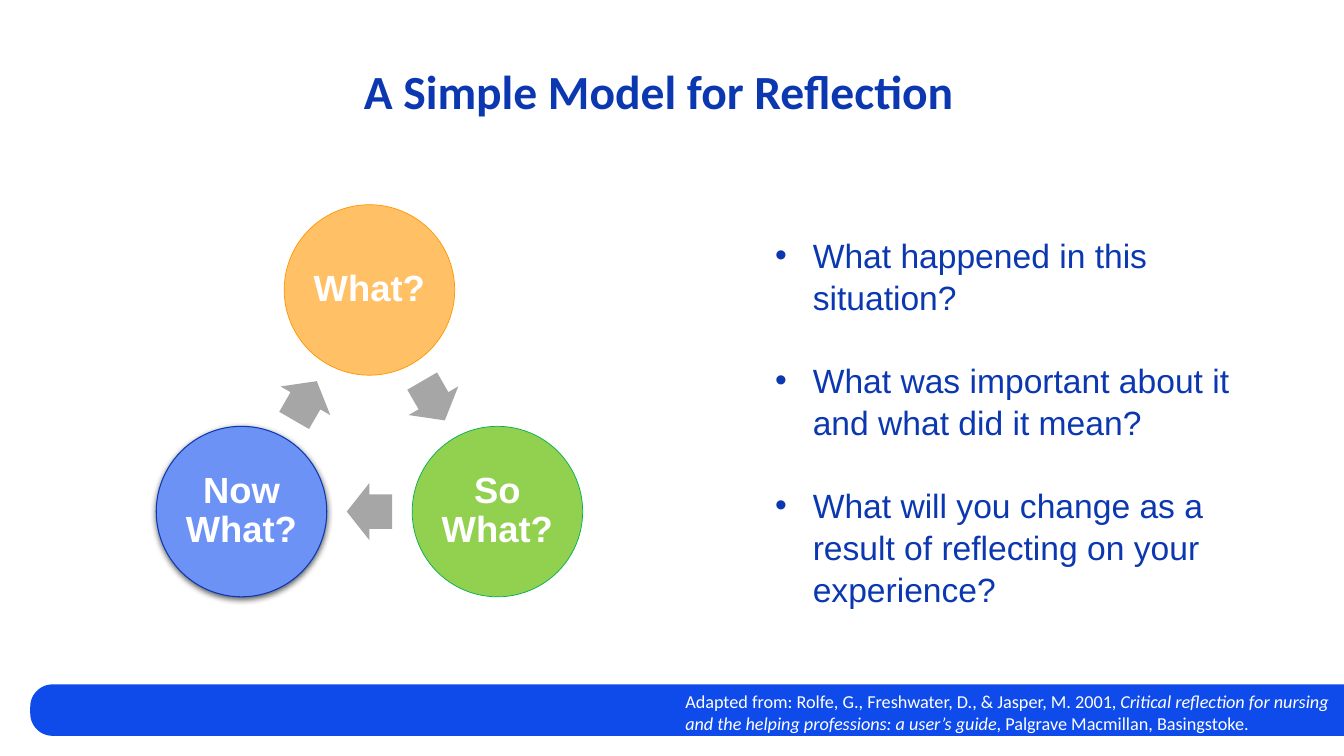
import math

import pptx
import pptx.dml.color
import pptx.enum.shapes
import pptx.enum.text
import pptx.oxml
import pptx.oxml.ns
import pptx.util

Pt = pptx.util.Pt
MSO_SHAPE = pptx.enum.shapes.MSO_SHAPE
PP_ALIGN = pptx.enum.text.PP_ALIGN
MSO_ANCHOR = pptx.enum.text.MSO_ANCHOR
MSO_AUTO_SIZE = pptx.enum.text.MSO_AUTO_SIZE

COLORS = {
    "navy": "0B38B0", "bar": "0F4BEB", "white": "FFFFFF", "arrow": "A6A6A6",
    "orange": "FFC066", "orange_line": "FF9600",
    "green": "92D050", "green_line": "00B050",
    "blue": "6C92F6", "shadow": "000000",
}
# label, fill, outline, outline width, has shadow; clockwise from the top
STAGES = [
    ("What?", "orange", "orange_line", 0.5, False),
    ("So What?", "green", "green_line", 0.5, False),
    ("Now What?", "blue", "navy", 0.75, True),
]
QUESTIONS = [
    "What happened in this situation?",
    "What was important about it and what did it mean?",
    "What will you change as a result of reflecting on your experience?",
]
CITATION = [
    ("Adapted from: Rolfe, G., Freshwater, D., & Jasper, M. 2001, ", False),
    ("Critical reflection for nursing and the helping professions: "
     "a user’s guide", True),
    (", Palgrave Macmillan, Basingstoke.", False),
]


def rgb(name):
    return pptx.dml.color.RGBColor.from_string(COLORS[name])


def add_run(p, text, font, size, color, bold=False, italic=False):
    r = p.add_run()
    r.text = text
    r.font.name, r.font.size = font, Pt(size)
    r.font.bold, r.font.italic = bold, italic
    r.font.color.rgb = rgb(color)


def add_filled(slide, kind, cx, cy, w, h, fill, rotation=0):
    """Add a preset shape without outline or shadow, centred on (cx, cy)."""
    sp = slide.shapes.add_shape(kind, Pt(cx - w / 2), Pt(cy - h / 2), Pt(w), Pt(h))
    sp.shadow.inherit = False
    sp.fill.solid()
    sp.fill.fore_color.rgb = rgb(fill)
    sp.line.fill.background()
    sp.rotation = rotation
    return sp


def add_textbox(slide, x, y, w, h):
    tf = slide.shapes.add_textbox(Pt(x), Pt(y), Pt(w), Pt(h)).text_frame
    tf.word_wrap = True
    return tf


def cast_shadow(sp):
    effects = sp._element.spPr.find(pptx.oxml.ns.qn("a:effectLst"))
    effects.append(pptx.oxml.parse_xml(
        f'<a:outerShdw {pptx.oxml.ns.nsdecls("a")} blurRad="{Pt(4.5)}" '
        f'dist="{Pt(1.5)}" dir="5400000" rotWithShape="0">'
        f'<a:srgbClr val="{COLORS["shadow"]}"><a:alpha val="63000"/></a:srgbClr>'
        '</a:outerShdw>'))


def add_title(slide, x, y, w, h):
    title = slide.shapes.title
    title.left, title.top, title.width, title.height = Pt(x), Pt(y), Pt(w), Pt(h)
    tf = title.text_frame
    tf.auto_size = MSO_AUTO_SIZE.NONE
    tf.vertical_anchor = MSO_ANCHOR.TOP
    p = tf.paragraphs[0]
    p.alignment, p.line_spacing = PP_ALIGN.CENTER, 0.9
    add_run(p, "A Simple Model for Reflection", "Calibri", 34, "navy", bold=True)


def add_cycle(slide, x, y, w, h):
    """Place the stages on a ring, with an arrow midway between neighbours."""
    d = 121.8
    radius = (w - d) / math.sqrt(3)
    cx, cy = x + w / 2, y + d / 2 + radius
    step = 360 / len(STAGES)
    centers = []
    for i in range(len(STAGES)):
        a = math.radians(i * step - 90)
        centers.append((cx + radius * math.cos(a), cy + radius * math.sin(a)))

    for i, (label, fill, line, width, shadow) in enumerate(STAGES):
        here, after = centers[i], centers[(i + 1) % len(STAGES)]
        sp = add_filled(slide, MSO_SHAPE.OVAL, *here, d, d, fill)
        sp.line.color.rgb = rgb(line)
        sp.line.width = Pt(width)
        if shadow:
            cast_shadow(sp)
        tf = sp.text_frame
        tf.word_wrap = True
        tf.vertical_anchor = MSO_ANCHOR.MIDDLE
        tf.margin_left = tf.margin_right = tf.margin_top = tf.margin_bottom = Pt(2)
        p = tf.paragraphs[0]
        p.alignment, p.line_spacing = PP_ALIGN.CENTER, 0.9
        add_run(p, label, "Arial", 26, "white", bold=True)

        mid = [(a + b) / 2 for a, b in zip(here, after)]
        arrow = add_filled(slide, MSO_SHAPE.RIGHT_ARROW, *mid, 32.4, 41, "arrow",
                           step / 2 + i * step)
        arrow.adjustments[0], arrow.adjustments[1] = 0.6, 0.5


def add_questions(slide, x, y, w, h):
    tf = add_textbox(slide, x, y, w, h)
    for i, question in enumerate(QUESTIONS):
        p = tf.add_paragraph() if i else tf.paragraphs[0]
        pPr = p._p.get_or_add_pPr()
        pPr.set("marL", str(Pt(27)))
        pPr.set("indent", str(Pt(-27)))
        ns = pptx.oxml.ns.nsdecls("a")
        pPr.append(pptx.oxml.parse_xml(f'<a:buFont {ns} typeface="Arial"/>'))
        pPr.append(pptx.oxml.parse_xml(f'<a:buChar {ns} char="•"/>'))
        p.line_spacing = 1.05
        if i:
            p.space_before = Pt(28.8)
        add_run(p, question, "Arial", 24, "navy")


def add_footer(slide, x, y, w, h):
    bar = add_filled(slide, MSO_SHAPE.ROUND_2_SAME_RECTANGLE,
                     x + w / 2, y + h / 2, h, w, "bar", 270)
    bar.adjustments[0], bar.adjustments[1] = 0.433, 0
    text_w = 477.6
    tf = add_textbox(slide, x + w - text_w, y + 1, text_w, 39)
    for text, italic in CITATION:
        add_run(tf.paragraphs[0], text, "Calibri", 13, "white", italic=italic)


def main():
    prs = pptx.Presentation()
    prs.slide_width, prs.slide_height = Pt(960), Pt(540)
    slide = prs.slides.add_slide(prs.slide_layouts[5])
    add_footer(slide, 21.6, 488.8, 938.4, 36.8)
    add_title(slide, 44.6, 45.4, 851.8, 72)
    add_cycle(slide, 111.6, 146.2, 304.6, 280)
    add_questions(slide, 546.5, 162.7, 350, 269.3)
    prs.save("out.pptx")


if __name__ == "__main__":
    main()
